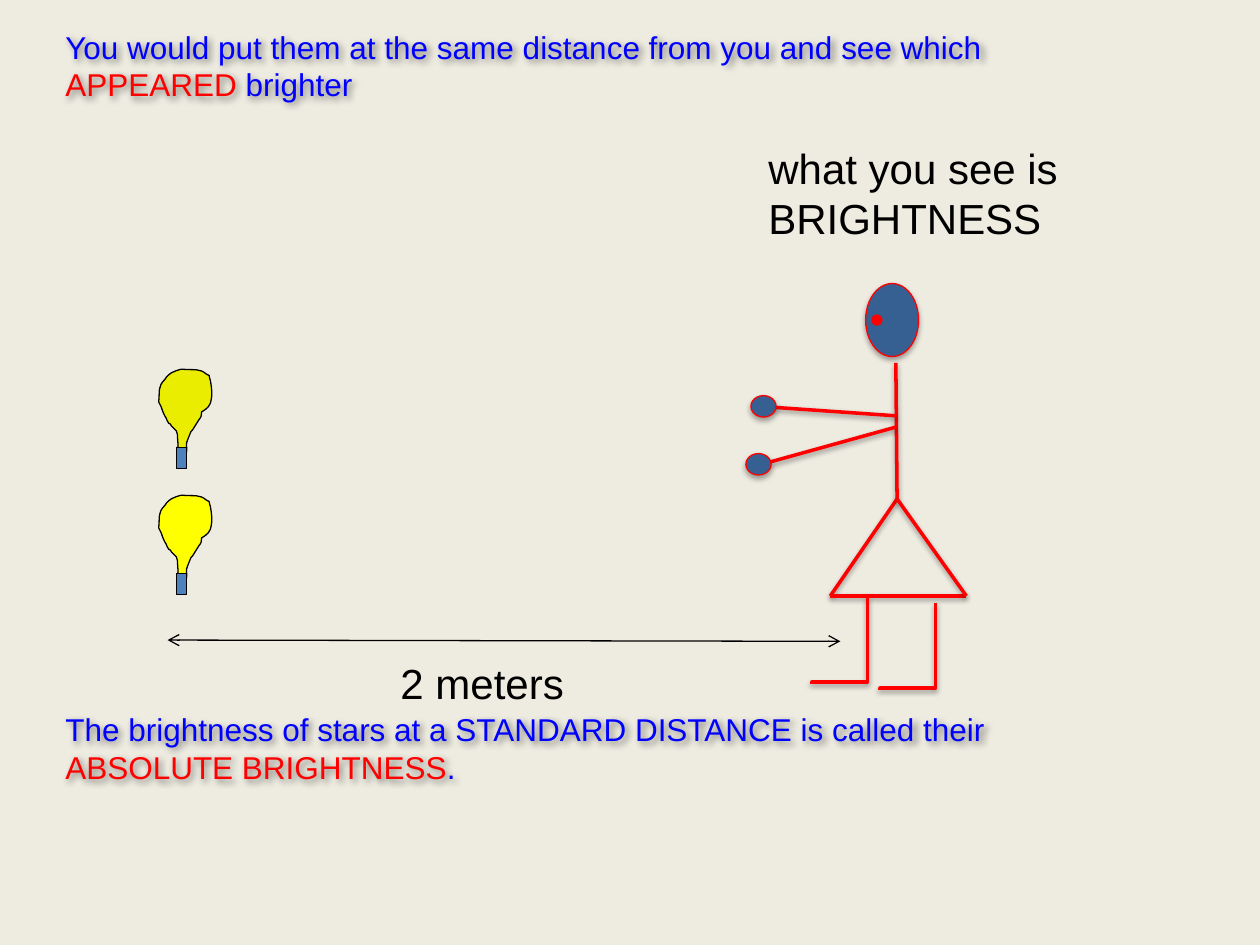
import dataclasses
import typing

import lxml.etree
import pptx
import pptx.dml.color
import pptx.enum.shapes
import pptx.oxml.ns
import pptx.util

Inches = pptx.util.Inches
Pt = pptx.util.Pt
qn = pptx.oxml.ns.qn
Shape = pptx.enum.shapes.MSO_SHAPE
Connector = pptx.enum.shapes.MSO_CONNECTOR
Point = tuple[float, float]


class Shadow(typing.NamedTuple):
    alpha: int
    blur: float
    distance: float
    angle: int


@dataclasses.dataclass(frozen=True)
class Theme:
    background: str = "EEECE1"
    red: str = "FF0000"
    blue: str = "0000FF"
    black: str = "000000"
    skin: str = "376092"
    socket: str = "4F81BD"
    dim_bulb: str = "EBED01"
    bright_bulb: str = "FFFF00"
    font: str = "Arial"
    caption_size: int = 18
    label_size: int = 24
    thin: float = 0.75
    thick: float = 2
    solid_shadow: Shadow = Shadow(35, 3.1, 1.8, 90)
    limb_shadow: Shadow = Shadow(38, 3.1, 1.6, 90)
    text_shadow: Shadow = Shadow(50, 4, 3, 45)


THEME = Theme()


class Frame(typing.NamedTuple):
    left: float
    top: float
    width: float
    height: float


class Limb(typing.NamedTuple):
    start: Point
    end: Point


class Span(typing.NamedTuple):
    text: str
    color: str


class TextBlock(typing.NamedTuple):
    frame: Frame
    size: int
    paragraphs: list[list[Span]]
    gap: float = 0
    shadow: Shadow | None = None


class Bulb(typing.NamedTuple):
    drop: float
    color: str


HEAD = Frame(6.87, 2.25, 0.42, 0.58)
HANDS = [Frame(5.96, 3.14, 0.2, 0.17), Frame(5.92, 3.6, 0.2, 0.17)]
EYE = Frame(6.92, 2.5, 0.08, 0.08)
NECK, WAIST, HEM_LEFT, HEM_RIGHT = (7.11, 2.88), (7.12, 3.96), (6.59, 4.73), (7.67, 4.73)
BODY = [Limb(NECK, WAIST), Limb(WAIST, HEM_LEFT), Limb(HEM_LEFT, HEM_RIGHT),
        Limb(WAIST, HEM_RIGHT)]
ARMS = [Limb((7.11, 3.39), (6.1, 3.67)), Limb((7.11, 3.3), (6.1, 3.23))]
LEGS = [(6.32, 4.86), (6.86, 4.91)]
LEG_LENGTH, FOOT_LENGTH = 0.69, 0.44
DIM_BULB, BRIGHT_BULB = Bulb(0, THEME.dim_bulb), Bulb(1, THEME.bright_bulb)

# Two numbers make a straight segment, six make a Bézier curve.
GLASS_FRAME = Frame(1.25, 2.92, 0.44, 0.71)
GLASS_START = (1.41, 3.61)
GLASS = [
    (1.4, 3.58, 1.42, 3.58, 1.41, 3.48), (1.41, 3.46, 1.41, 3.44, 1.4, 3.42),
    (1.39, 3.4, 1.37, 3.4, 1.36, 3.38), (1.36, 3.37, 1.35, 3.36, 1.34, 3.36),
    (1.33, 3.34, 1.32, 3.33, 1.32, 3.32), (1.3, 3.29, 1.29, 3.26, 1.28, 3.23),
    (1.26, 3.19), (1.27, 3.1, 1.25, 3.07, 1.31, 3.01),
    (1.32, 2.99, 1.35, 2.96, 1.38, 2.95), (1.4, 2.94, 1.44, 2.93, 1.44, 2.93),
    (1.55, 2.94, 1.58, 2.92, 1.64, 2.97), (1.65, 2.97, 1.65, 2.98, 1.66, 2.98),
    (1.66, 3, 1.67, 3.01, 1.67, 3.02), (1.68, 3.08, 1.69, 3.13, 1.67, 3.2),
    (1.66, 3.22, 1.65, 3.24, 1.63, 3.25), (1.6, 3.27),
    (1.6, 3.29, 1.6, 3.31, 1.58, 3.33), (1.53, 3.41),
    (1.52, 3.42, 1.51, 3.43, 1.51, 3.44), (1.49, 3.49), (1.48, 3.52),
    (1.48, 3.55, 1.49, 3.59, 1.47, 3.61), (1.46, 3.63, 1.42, 3.63, 1.41, 3.61),
]

TEXTS = [
    TextBlock(Frame(3.08, 5.17, 2.33, 0.51), THEME.label_size,
              [[Span("2 meters", THEME.black)]]),
    TextBlock(Frame(6, 1.08, 3.17, 0.91), THEME.label_size,
              [[Span("what you see is BRIGHTNESS", THEME.black)]]),
    TextBlock(Frame(0.42, 0.17, 8.58, 6.46), THEME.caption_size, [
        [Span("You would put them at the same distance from you and see which ", THEME.blue),
         Span("APPEARED", THEME.red), Span(" brighter", THEME.blue)],
        [Span("The brightness of stars at a STANDARD DISTANCE is called their ", THEME.blue),
         Span("ABSOLUTE BRIGHTNESS", THEME.red), Span(".", THEME.blue)],
    ], gap=347, shadow=THEME.text_shadow),
]


def rgb(color: str) -> pptx.dml.color.RGBColor:
    return pptx.dml.color.RGBColor.from_string(color)


def set_shadow(shape, shadow: Shadow | None) -> None:
    """Replace the inherited effects; call after fill and line are set."""
    effects = lxml.etree.SubElement(shape._element.spPr, qn("a:effectLst"))
    if shadow:
        outer = lxml.etree.SubElement(
            effects, qn("a:outerShdw"), blurRad=str(Pt(shadow.blur)),
            dist=str(Pt(shadow.distance)), dir=str(shadow.angle * 60000), rotWithShape="0")
        tint = lxml.etree.SubElement(outer, qn("a:srgbClr"), val=THEME.black)
        lxml.etree.SubElement(tint, qn("a:alpha"), val=str(shadow.alpha * 1000))


def style(shape, line: str, width: float, fill: str | None = None,
          shadow: Shadow | None = None) -> None:
    if fill:
        shape.fill.solid()
        shape.fill.fore_color.rgb = rgb(fill)
    shape.line.color.rgb = rgb(line)
    shape.line.width = Pt(width)
    set_shadow(shape, shadow)


def draw_oval(shapes, frame: Frame, fill: str, shadow: Shadow | None = None) -> None:
    oval = shapes.add_shape(Shape.OVAL, *map(Inches, frame))
    style(oval, THEME.red, THEME.thin, fill, shadow)


def draw_limb(shapes, limb: Limb) -> None:
    line = shapes.add_connector(Connector.STRAIGHT, *map(Inches, limb.start + limb.end))
    style(line, THEME.red, THEME.thick, shadow=THEME.limb_shadow)


def draw_leg(shapes, left: float, top: float) -> None:
    """Draw an elbow turned a quarter, so that its short last part is the foot."""
    leg = shapes.add_connector(Connector.ELBOW, *map(
        Inches, (left, top, left + LEG_LENGTH, top + FOOT_LENGTH)))
    properties = leg._element.spPr
    properties.find(qn("a:xfrm")).set("rot", str(90 * 60000))
    guides = properties.find(qn("a:prstGeom")).get_or_add_avLst()
    lxml.etree.SubElement(guides, qn("a:gd"), name="adj1", fmla="val 98100")
    style(leg, THEME.red, THEME.thick, shadow=THEME.limb_shadow)


def draw_observer(shapes) -> None:
    draw_oval(shapes, HEAD, THEME.skin, THEME.solid_shadow)
    for limb in BODY:
        draw_limb(shapes, limb)
    for left, top in LEGS:
        draw_leg(shapes, left, top)
    for limb in ARMS:
        draw_limb(shapes, limb)
    for hand in HANDS:
        draw_oval(shapes, hand, THEME.skin, THEME.solid_shadow)


def draw_bulb(shapes, bulb: Bulb) -> None:
    """Draw the frame as a freeform, then give it the curved glass outline."""
    left, top, width, height = GLASS_FRAME
    corners = [(left, top), (left + width, top), (left + width, top + height),
               (left, top + height)]
    start, *rest = [(Inches(x), Inches(y + bulb.drop)) for x, y in corners]
    builder = shapes.build_freeform(*start)
    builder.add_line_segments(rest, close=True)
    glass = builder.convert_to_shape()
    outline = next(glass._element.iter(qn("a:path")))
    del outline[:]
    steps = [("a:moveTo", GLASS_START)]
    steps += [("a:lnTo" if len(part) == 2 else "a:cubicBezTo", part) for part in GLASS]
    for tag, numbers in steps:
        step = lxml.etree.SubElement(outline, qn(tag))
        for x, y in zip(numbers[::2], numbers[1::2]):
            lxml.etree.SubElement(step, qn("a:pt"), x=str(Inches(x - left)),
                                  y=str(Inches(y - top)))
    lxml.etree.SubElement(outline, qn("a:close"))
    style(glass, THEME.black, THEME.thin, bulb.color)
    socket = shapes.add_shape(Shape.RECTANGLE, *map(Inches, (1.4, 3.55 + bulb.drop, 0.08, 0.17)))
    style(socket, THEME.black, THEME.thin, THEME.socket)


def draw_distance_arrow(shapes) -> None:
    arrow = shapes.add_connector(Connector.STRAIGHT, *map(Inches, (1.33, 5.08, 6.67, 5.09)))
    style(arrow, THEME.black, THEME.thin)
    for end in ("a:headEnd", "a:tailEnd"):
        lxml.etree.SubElement(arrow.line._get_or_add_ln(), qn(end), type="arrow")


def draw_text(shapes, block: TextBlock) -> None:
    box = shapes.add_textbox(*map(Inches, block.frame))
    box.text_frame.word_wrap = True
    for index, spans in enumerate(block.paragraphs):
        para = box.text_frame.add_paragraph() if index else box.text_frame.paragraphs[0]
        if index:
            para.space_before = Pt(block.gap)
        for span in spans:
            run = para.add_run()
            run.text = span.text
            for name, value in {"name": THEME.font, "size": Pt(block.size)}.items():
                setattr(run.font, name, value)
            run.font.color.rgb = rgb(span.color)
    if block.shadow:
        set_shadow(box, block.shadow)


def main() -> None:
    deck = pptx.Presentation()
    deck.slide_width, deck.slide_height = Inches(10), Inches(7.5)
    page = deck.slides.add_slide(deck.slide_layouts[6])
    page.background.fill.solid()
    page.background.fill.fore_color.rgb = rgb(THEME.background)
    draw_observer(page.shapes.add_group_shape().shapes)
    draw_bulb(page.shapes, DIM_BULB)
    draw_oval(page.shapes, EYE, THEME.red)
    draw_distance_arrow(page.shapes)
    for block in TEXTS:
        draw_text(page.shapes, block)
    draw_bulb(page.shapes.add_group_shape().shapes, BRIGHT_BULB)
    deck.save("out.pptx")


if __name__ == "__main__":
    main()
